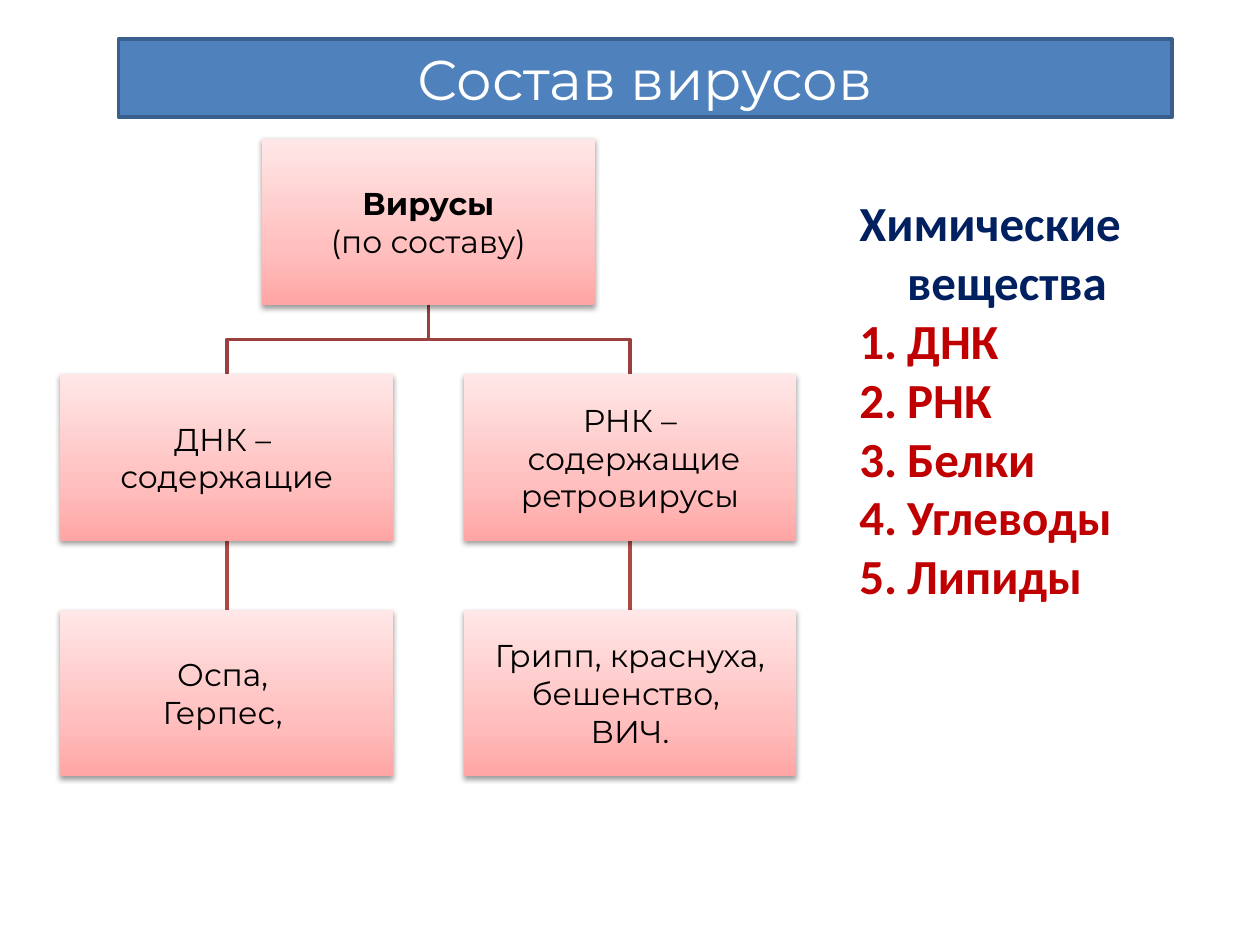
"""Build the slide on the composition of viruses."""
from pptx import Presentation
from pptx.dml.color import RGBColor
from pptx.enum.shapes import MSO_CONNECTOR, MSO_SHAPE
from pptx.enum.text import MSO_ANCHOR, MSO_AUTO_SIZE, PP_ALIGN
from pptx.oxml import parse_xml
from pptx.oxml.ns import nsdecls
from pptx.util import Inches, Pt

RECT, STRAIGHT = MSO_SHAPE.RECTANGLE, MSO_CONNECTOR.STRAIGHT
CENTER, LEFT = PP_ALIGN.CENTER, PP_ALIGN.LEFT
MIDDLE, TOP, NO_FIT = MSO_ANCHOR.MIDDLE, MSO_ANCHOR.TOP, MSO_AUTO_SIZE.NONE

TITLE = "Состав вирусов"
HEADING = "Химические вещества"
SUBSTANCES = ["ДНК", "РНК", "Белки", "Углеводы", "Липиды"]
NODES = {
    "root": (1, 0, ["Вирусы", "(по составу)"]),
    "dna": (0, 1, ["ДНК – ", "содержащие"]),
    "dna_examples": (0, 2, ["Оспа, ", "Герпес, "]),
    "rna": (2, 1, ["РНК –", " содержащие", "ретровирусы"]),
    "rna_examples": (2, 2, ["Грипп, краснуха, бешенство, ", "ВИЧ."]),
}
LINKS = [("rna", "rna_examples"), ("root", "rna"),
         ("dna", "dna_examples"), ("root", "dna")]
GRADIENT = [(0, "FFA6A5"), (35, "FFC0BF"), (100, "FFE7E7")]
BOX_W, BOX_H = 2.64, 1.32
GRID_X, GRID_Y, STEP_X, STEP_Y = 0.48, 1.1, 1.6, 1.87
INDENT = 0.38


def color(value):
    return RGBColor.from_string(value)


def place(sp, x, y, w, h):
    sp.left, sp.top, sp.width, sp.height = map(Inches, (x, y, w, h))


def add_run(p, text, size, font, hue, bold=False):
    r = p.add_run()
    r.text = text
    r.font.size, r.font.name, r.font.bold = Pt(size), font, bold
    r.font.color.rgb = color(hue)


def set_line(sp, hue):
    sp.line.color.rgb = color(hue)
    sp.line.width = Pt(2)


def paragraphs(tf, count):
    return [tf.paragraphs[0]] + [tf.add_paragraph() for _ in range(count - 1)]


def corner(name):
    col, row, _ = NODES[name]
    return GRID_X + col * STEP_X, GRID_Y + row * STEP_Y


def add_link(slide, parent, child):
    (px, py), (cx, cy) = corner(parent), corner(child)
    x1, y1, x2, y2 = map(Inches, (px + BOX_W / 2, py + BOX_H, cx + BOX_W / 2, cy))
    if x1 == x2:
        sp = slide.shapes.add_connector(STRAIGHT, x1, y1, x2, y2)
        sp.element.spPr.append(parse_xml(f"<a:effectLst {nsdecls('a')}/>"))
        set_line(sp, "AE4946")
        return
    mid = (y1 + y2) // 2
    builder = slide.shapes.build_freeform(x1, y1)
    builder.add_line_segments([(x1, mid), (x2, mid), (x2, y2)], close=False)
    sp = builder.convert_to_shape()
    sp.fill.background()
    sp.shadow.inherit = False
    set_line(sp, "9A403E")


def style_box(sp):
    stops = "".join(f'<a:gs pos="{pos * 1000}"><a:srgbClr val="{hue}"/></a:gs>'
                    for pos, hue in GRADIENT)
    sp.line.fill.background()
    sp.shadow.inherit = False
    spPr = sp.element.spPr
    spPr.insert(2, parse_xml(
        f'<a:gradFill {nsdecls("a")} rotWithShape="1"><a:gsLst>{stops}</a:gsLst>'
        '<a:lin ang="16200000" scaled="0"/></a:gradFill>'))
    spPr[-1].append(parse_xml(
        f'<a:outerShdw {nsdecls("a")} blurRad="40000" dist="20000" dir="5400000" '
        'rotWithShape="0"><a:srgbClr val="000000"><a:alpha val="38000"/>'
        '</a:srgbClr></a:outerShdw>'))


def add_box(slide, name):
    x, y = corner(name)
    lines = NODES[name][2]
    sp = slide.shapes.add_shape(RECT, *map(Inches, (x, y, BOX_W, BOX_H)))
    style_box(sp)
    tf = sp.text_frame
    tf.word_wrap, tf.vertical_anchor = True, MIDDLE
    tf.margin_left = tf.margin_right = tf.margin_top = tf.margin_bottom = Inches(0.01)
    for i, (p, text) in enumerate(zip(paragraphs(tf, len(lines)), lines)):
        p.alignment = CENTER
        add_run(p, text, 18, "Montserrat", "000000", name == "root" and i == 0)


def fill_title(sp):
    place(sp, 0.94, 0.31, 8.36, 0.62)
    sp.element.spPr.append(parse_xml(
        f'<a:prstGeom {nsdecls("a")} prst="round2DiagRect"><a:avLst>'
        '<a:gd name="adj1" fmla="val 16667"/><a:gd name="adj2" fmla="val 0"/>'
        '</a:avLst></a:prstGeom>'))
    sp.fill.solid()
    sp.fill.fore_color.rgb = color("4F81BD")
    set_line(sp, "3A5F8C")
    tf = sp.text_frame
    tf.auto_size, tf.vertical_anchor = NO_FIT, MIDDLE
    p = tf.paragraphs[0]
    p.alignment = CENTER
    add_run(p, TITLE, 32, "Montserrat", "FFFFFF")


def fill_list(sp):
    place(sp, 6.72, 1.48, 3.05, 3.4)
    tf = sp.text_frame
    tf.word_wrap, tf.auto_size, tf.vertical_anchor = True, NO_FIT, TOP
    lines = [HEADING] + SUBSTANCES
    for i, (p, text) in enumerate(zip(paragraphs(tf, len(lines)), lines)):
        p.alignment, p.space_before = LEFT, Pt(0)
        pPr = p._p.get_or_add_pPr()
        pPr.set("marL", str(Inches(INDENT)))
        pPr.set("indent", str(Inches(-INDENT)))
        bullet = 'buAutoNum type="arabicPeriod"' if i else "buNone"
        pPr.append(parse_xml(f"<a:{bullet} {nsdecls('a')}/>"))
        add_run(p, text, 28, "Calibri", "C00000" if i else "002060", True)


def main():
    prs = Presentation()
    prs.slide_width, prs.slide_height = Inches(10), Inches(7.5)
    slide = prs.slides.add_slide(prs.slide_layouts[1])
    for parent, child in LINKS:
        add_link(slide, parent, child)
    for name in NODES:
        add_box(slide, name)
    fill_title(slide.shapes.title)
    fill_list(slide.placeholders[1])
    prs.save("out.pptx")


if __name__ == "__main__":
    main()
